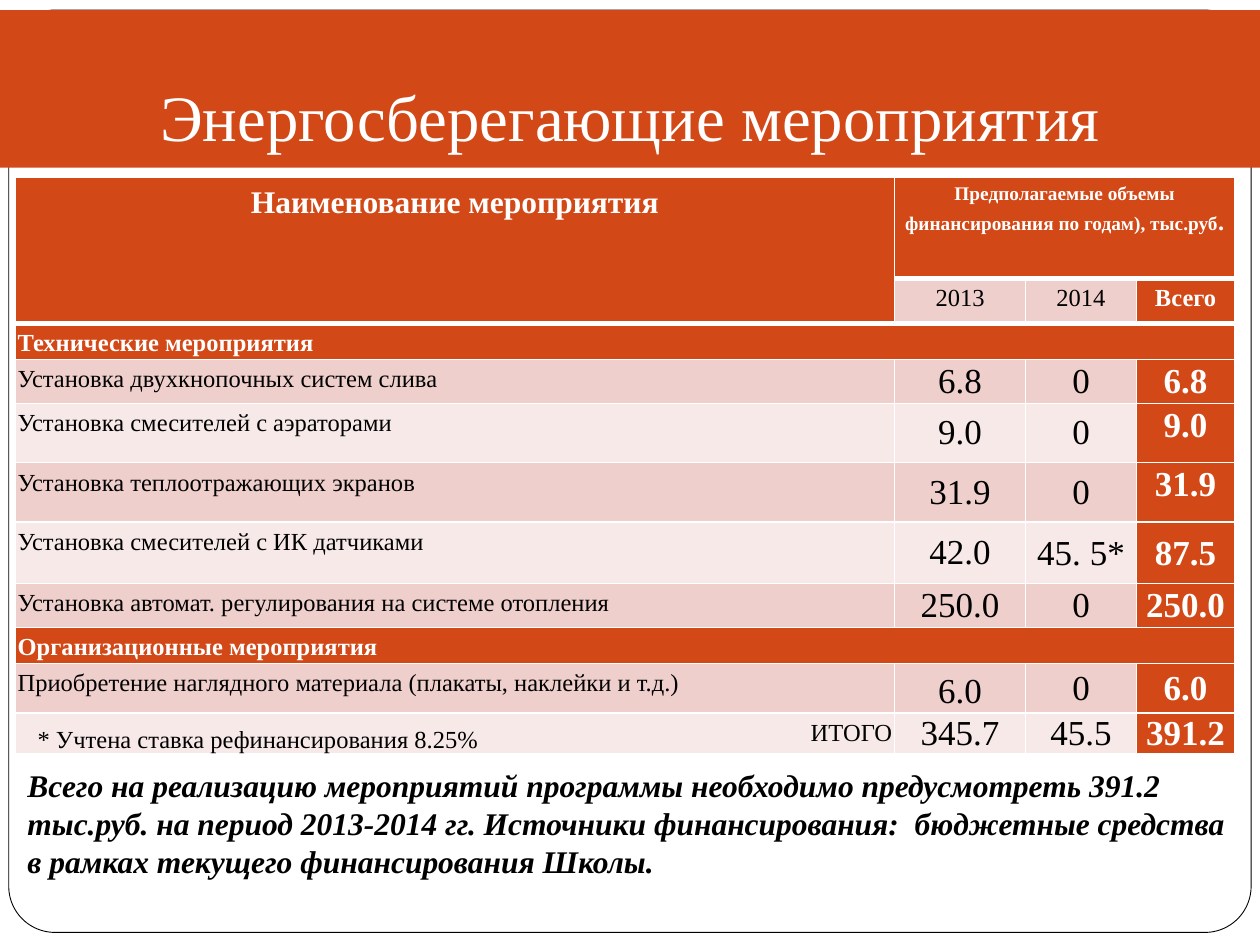
from lxml import etree
from pptx import Presentation
from pptx import util as u
from pptx.dml.color import RGBColor
from pptx.enum import shapes, text
from pptx.oxml.ns import qn

W, H = 10, 7.5
FONT = "Times New Roman"
COLORS = {"accent": "D34817", "white": "FFFFFF", "black": "000000",
          "band": "EFCFCC", "band_light": "F7E9E8"}
LEFT, CENTER, RIGHT = text.PP_ALIGN.LEFT, text.PP_ALIGN.CENTER, text.PP_ALIGN.RIGHT
TOP, MIDDLE = text.MSO_ANCHOR.TOP, text.MSO_ANCHOR.MIDDLE

COLS = [6.98, 1.04, 0.88, 0.78]
ROWS = [0.8, 0.27, 0.26, 0.34, 0.47, 0.47, 0.49, 0.34, 0.26, 0.36, 0.25]
SECTIONS = {2: "Технические мероприятия", 8: "Организационные мероприятия"}
# Table row: name, 2013, 2014, total
MEASURES = {
    3: ("Установка двухкнопочных систем слива", "6.8", "0", "6.8"),
    4: ("Установка смесителей с аэраторами", "9.0", "0", "9.0"),
    5: ("Установка теплоотражающих экранов", "31.9", "0", "31.9"),
    6: ("Установка смесителей с ИК датчиками", "42.0", "45. 5*", "87.5"),
    7: ("Установка автомат. регулирования на системе отопления", "250.0", "0", "250.0"),
    9: ("Приобретение наглядного материала (плакаты, наклейки и т.д.)", "6.0", "0", "6.0"),
    10: ("ИТОГО", "345.7", "45.5", "391.2"),
}


def rgb(name):
    return RGBColor.from_string(COLORS[name])


def inches(box):
    return [u.Inches(v) for v in box]


def add_run(p, words, size, color="black", **fmt):
    r = p.add_run()
    r.text = words
    r.font.color.rgb = rgb(color)
    for key, value in {"size": u.Pt(size), "name": FONT, "bold": False, **fmt}.items():
        setattr(r.font, key, value)


def add_frame(s, box):
    """Rounded page outline, placed behind everything else."""
    sp = s.shapes.add_shape(shapes.MSO_SHAPE.ROUNDED_RECTANGLE, *inches(box))
    sp.adjustments[0] = 0.05
    sp.shadow.inherit = False
    sp.fill.solid()
    sp.fill.fore_color.rgb = rgb("white")
    sp.line.color.rgb = rgb("black")
    sp.line.width = u.Pt(0.5)
    s.shapes._spTree.insert(2, sp._element)


def set_title(s, box, words):
    sp = s.shapes.title
    sp.left, sp.top, sp.width, sp.height = inches(box)
    sp.fill.solid()
    sp.fill.fore_color.rgb = rgb("accent")
    tf = sp.text_frame
    for key, value in {"vertical_anchor": text.MSO_ANCHOR.BOTTOM, "word_wrap": True,
                       "auto_size": text.MSO_AUTO_SIZE.NONE,
                       "margin_bottom": u.Inches(0.1)}.items():
        setattr(tf, key, value)
    tf.paragraphs[0].alignment = CENTER
    add_run(tf.paragraphs[0], words, 37, "white")


def set_borders(cell, bottom):
    tc_pr = cell._tc.get_or_add_tcPr()
    for side, width in {"L": 1, "R": 1, "T": 1, "B": bottom}.items():
        ln = etree.SubElement(tc_pr, qn(f"a:ln{side}"), w=str(u.Pt(width)))
        fill = etree.SubElement(ln, qn("a:solidFill"))
        etree.SubElement(fill, qn("a:srgbClr"), val=COLORS["white"])


def fill_cell(cell, words, size, fill, align=CENTER, anchor=TOP, spacing=1.15, pad=0.02):
    on_accent = fill == "accent"
    cell.fill.solid()
    cell.fill.fore_color.rgb = rgb(fill)
    cell.vertical_anchor = anchor
    for side in ("left", "right", "top", "bottom"):
        setattr(cell, f"margin_{side}", u.Inches(pad))
    cell.margin_bottom = u.Inches(pad if pad > 0.01 else 0)
    p = cell.text_frame.paragraphs[0]
    p.alignment, p.line_spacing = align, spacing
    add_run(p, words, size, "white" if on_accent else "black", bold=on_accent)
    return p


def fill_header(table):
    table.cell(0, 0).merge(table.cell(1, 0))
    table.cell(0, 1).merge(table.cell(0, 3))
    fill_cell(table.cell(0, 0), "Наименование мероприятия", 18, "accent")
    p = fill_cell(table.cell(0, 1),
                  "Предполагаемые объемы финансирования по годам), тыс.руб", 11, "accent")
    add_run(p, ".", 14, "white", bold=True)
    for col, (words, fill) in enumerate(
            [("2013", "band"), ("2014", "band"), ("Всего", "accent")], 1):
        fill_cell(table.cell(1, col), words, 14, fill)


def fill_measure(table, row, name, *values):
    band = "band_light" if row % 2 == 0 else "band"
    last = len(ROWS) - 1
    fill_cell(table.cell(row, 0), name, 14, band, RIGHT if row == last else LEFT)
    for col, value in enumerate(values, 1):
        is_total = col == 3
        tight = row == last or (row >= 6 and col > 1)
        fill_cell(table.cell(row, col), value, 20, "accent" if is_total else band,
                  anchor=TOP if is_total and row < 6 else MIDDLE,
                  spacing=1.15 if (row, col) == (9, 1) else 1.0,
                  pad=0.01 if tight else 0.02)


def add_measures_table(s, left, top):
    gf = s.shapes.add_table(len(ROWS), len(COLS),
                            *inches((left, top, sum(COLS), sum(ROWS))))
    table = gf.table
    table.first_row = table.horz_banding = False
    for sizes, lines, key in ((COLS, table.columns, "width"), (ROWS, table.rows, "height")):
        for size, line in zip(sizes, lines):
            setattr(line, key, u.Inches(size))
    for i, row in enumerate(table.rows):
        for cell in row.cells:
            set_borders(cell, 3 if i < 2 else 1)
    fill_header(table)
    for row, words in SECTIONS.items():
        table.cell(row, 0).merge(table.cell(row, 3))
        fill_cell(table.cell(row, 0), words, 14, "accent", LEFT,
                  MIDDLE if row == 8 else TOP)
    for row, values in MEASURES.items():
        fill_measure(table, row, *values)


def add_note(s, box, words, size, wrap=True, **fmt):
    tf = s.shapes.add_textbox(*inches(box)).text_frame
    tf.word_wrap = wrap
    tf.auto_size = text.MSO_AUTO_SIZE.SHAPE_TO_FIT_TEXT
    add_run(tf.paragraphs[0], words, size, **fmt)


def main():
    prs = Presentation()
    prs.slide_width, prs.slide_height = inches((W, H))
    s = prs.slides.add_slide(prs.slide_layouts[5])
    add_frame(s, (0.07, 0.08, W - 0.14, 7.32))
    set_title(s, (0, 0.08, W, H / 6), "Энергосберегающие мероприятия")
    add_measures_table(s, 0.12, 1.41)
    add_note(s, (0.12, 6.03, 9.76, 1.01),
             "Всего на реализацию мероприятий программы необходимо предусмотреть 391.2 "
             "тыс.руб. на период 2013-2014 гг. Источники финансирования:  бюджетные "
             "средства в рамках текущего финансирования Школы.",
             18, bold=True, italic=True)
    add_note(s, (0.2, 5.7, 3.95, 0.34), "* Учтена ставка рефинансирования 8.25%", 14,
             wrap=False)
    prs.save("out.pptx")


if __name__ == "__main__":
    main()
